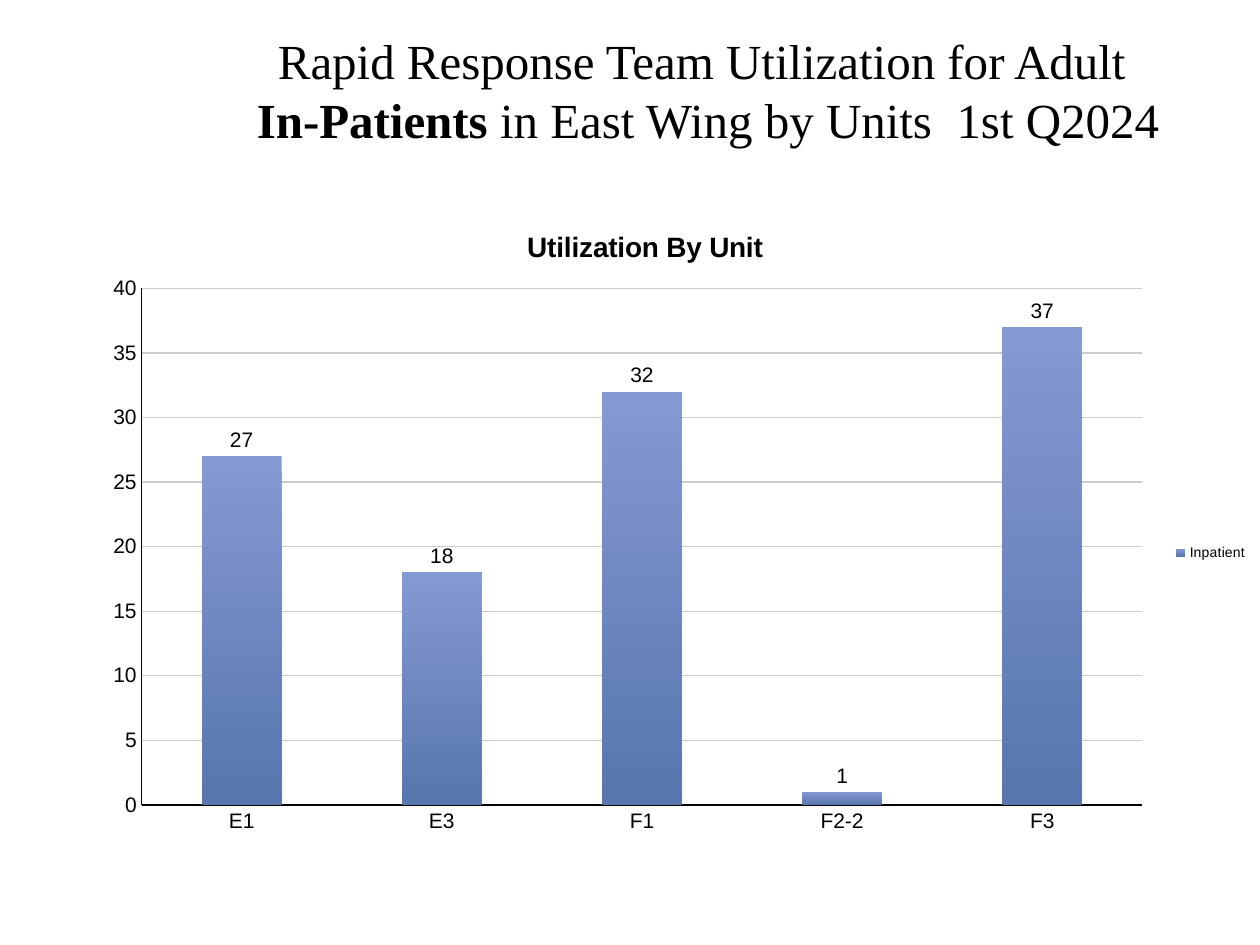
"""Builds a slide with a column chart of rapid response use by hospital unit."""
from dataclasses import dataclass
from typing import Any

from lxml.etree import SubElement
from pptx import Presentation
from pptx.chart.data import CategoryChartData
from pptx.dml.color import RGBColor
from pptx.enum.chart import XL_CHART_TYPE as ChartType, XL_LABEL_POSITION as LabelPos
from pptx.enum.chart import XL_LEGEND_POSITION as LegendPos, XL_TICK_MARK as Tick
from pptx.enum.text import MSO_ANCHOR as Anchor, PP_ALIGN as Align
from pptx.oxml.ns import qn
from pptx.util import Inches, Pt

COLORS = {"ink": "000000", "grid": "CCCCCC", "top": "8599D3", "base": "5876AE"}
UNITS = {"E1": 27, "E3": 18, "F1": 32, "F2-2": 1, "F3": 37}


@dataclass(frozen=True)
class Box:
    """Place and size as shares of the enclosing area."""
    x: float
    y: float
    w: float = 0
    h: float = 0


TITLE = Box(0.114, 0.015, 0.886, 0.16)
CHART = Box(0.026, 0.207, 0.971, 0.756)
PLOT = Box(0.089, 0.13, 0.818, 0.723)
HEADING = Box(0.4, 0.04)
LEGEND = Box(0.928, 0.48, 0.07, 0.04)


def rgb(name: str) -> RGBColor:
    """Look up a colour by name."""
    return RGBColor.from_string(COLORS[name])


def assign(obj: Any, values: dict[str, Any]) -> None:
    """Set several attributes of an object."""
    for name, value in values.items():
        setattr(obj, name, value)


def set_font(font: Any, size: float, bold: bool = False, name: str = "Arial") -> None:
    """Format a font in the ink colour."""
    assign(font, {"name": name, "size": Pt(size), "bold": bold})
    font.color.rgb = rgb("ink")


def set_line(line: Any, color: str) -> None:
    """Draw a hairline in a named colour."""
    line.color.rgb = rgb(color)
    line.width = 0


def frame(prs: Any, box: Box) -> dict[str, int]:
    """Turn shares of the slide into lengths."""
    return {"left": int(box.x * prs.slide_width), "top": int(box.y * prs.slide_height),
            "width": int(box.w * prs.slide_width), "height": int(box.h * prs.slide_height)}


def set_layout(parent: Any, after: str | None, box: Box, target: str | None = None) -> None:
    """Give a chart part a manual layout, placed after the named child."""
    for old in parent.findall(qn("c:layout")):
        parent.remove(old)
    layout = SubElement(parent, qn("c:layout"))
    manual = SubElement(layout, qn("c:manualLayout"))
    values = {"layoutTarget": target, "xMode": "edge", "yMode": "edge",
              "x": box.x, "y": box.y, "w": box.w, "h": box.h}
    for name, value in values.items():
        if value:
            SubElement(manual, qn(f"c:{name}")).set("val", str(value))
    if after:
        parent.find(qn(after)).addnext(layout)
    else:
        parent.insert(0, layout)


def add_title(prs: Any, slide: Any) -> None:
    """Fill and place the slide title."""
    sp = slide.shapes.title
    assign(sp, frame(prs, TITLE))
    tf = sp.text_frame
    assign(tf, {"vertical_anchor": Anchor.MIDDLE, "word_wrap": True})
    p = tf.paragraphs[0]
    p.alignment = Align.CENTER
    runs = [("Rapid Response Team Utilization for Adult", False), (" ", False),
            ("In-Patients", True), (" in East Wing by Units  1st Q2024", False)]
    for i, (text, bold) in enumerate(runs):
        if i == 1:
            p.add_line_break()
            SubElement(p._p.find(qn("a:br")), qn("a:rPr")).set("sz", "2800")
        r = p.add_run()
        r.text = text
        set_font(r.font, 28, bold, "Times New Roman")


def add_chart(prs: Any, slide: Any) -> None:
    """Draw the column chart of units."""
    data = CategoryChartData(number_format="#0")
    data.categories = list(UNITS)
    data.add_series("Inpatient", list(UNITS.values()))
    place = frame(prs, CHART)
    chart = slide.shapes.add_chart(ChartType.COLUMN_CLUSTERED, *place.values(), data).chart
    set_font(chart.font, 10, name="Calibri")

    tf = chart.chart_title.text_frame
    tf.text = "Utilization By Unit "
    set_font(tf.paragraphs[0].runs[0].font, 16, True)
    set_layout(chart.chart_title._element, "c:tx", HEADING)

    chart.has_legend = True
    assign(chart.legend, {"position": LegendPos.RIGHT, "include_in_layout": False})
    set_font(chart.legend.font, 8)
    set_layout(chart.legend._element, "c:legendPos", LEGEND)

    for axis in (chart.category_axis, chart.value_axis):
        assign(axis, {"major_tick_mark": Tick.NONE, "minor_tick_mark": Tick.NONE})
        set_font(axis.tick_labels.font, 12)
        set_line(axis.format.line, "ink")
    assign(chart.value_axis, {"minimum_scale": 0, "maximum_scale": 40, "major_unit": 5})
    assign(chart.value_axis.tick_labels, {"number_format": "#0", "number_format_is_linked": False})
    set_line(chart.value_axis.major_gridlines.format.line, "grid")

    plot = chart.plots[0]
    assign(plot, {"gap_width": 150, "vary_by_categories": False, "has_data_labels": True})
    assign(plot.data_labels, {"show_value": True, "position": LabelPos.OUTSIDE_END,
                              "number_format": "#0", "number_format_is_linked": False})
    set_font(plot.data_labels.font, 12)
    fill = plot.series[0].format.fill
    fill.gradient()
    fill.gradient_angle = 270
    for stop, (position, color) in zip(fill.gradient_stops, ((0, "top"), (1, "base"))):
        stop.position = position
        stop.color.rgb = rgb(color)
    set_layout(chart._chartSpace.chart.plotArea, None, PLOT, "inner")


def main() -> None:
    """Build and save the slide."""
    prs = Presentation()
    assign(prs, {"slide_width": Inches(10), "slide_height": Inches(7.5)})
    slide = prs.slides.add_slide(prs.slide_layouts[5])
    add_title(prs, slide)
    add_chart(prs, slide)
    prs.save("out.pptx")


if __name__ == "__main__":
    main()
